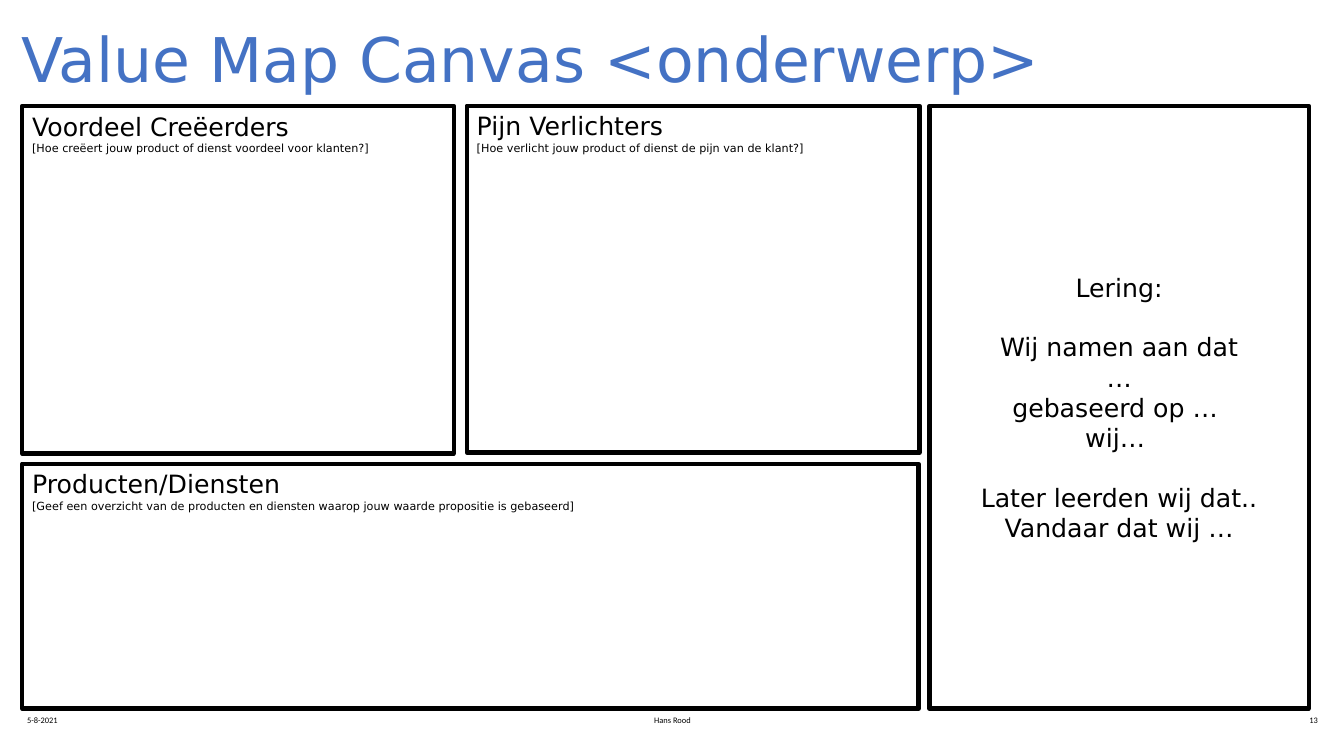
import pptx
import pptx.dml.color
import pptx.enum.shapes
import pptx.enum.text
import pptx.util

PX = 9144
ALIGN = pptx.enum.text.PP_ALIGN
ANCHOR = pptx.enum.text.MSO_ANCHOR
BODY_FONT = "DejaVu Sans"
BLACK = "000000"


def colour(value):
    """Turn a hex string into a colour."""
    return pptx.dml.color.RGBColor.from_string(value)


def place(box):
    """Turn a box in px into EMU lengths."""
    return [length * PX for length in box]


def write(para, text, size, font=BODY_FONT, ink=BLACK, align=ALIGN.LEFT):
    """Add one run of text to a paragraph."""
    para.alignment = align
    span = para.add_run()
    span.text = text
    span.font.size = pptx.util.Pt(size)
    span.font.name = font
    span.font.color.rgb = colour(ink)


def add_label(page, box, text, size, inset=(10, 5), **style):
    """Add a one-line text box and return its paragraph."""
    frame = page.shapes.add_textbox(*place(box)).text_frame
    frame.word_wrap = True
    frame.margin_left = frame.margin_right = inset[0] * PX
    frame.margin_top = frame.margin_bottom = inset[1] * PX
    para = frame.paragraphs[0]
    write(para, text, size, **style)
    return para


def add_frame(page, box, anchor):
    """Add a black outlined rectangle and return its text frame."""
    shape = page.shapes.add_shape(pptx.enum.shapes.MSO_SHAPE.RECTANGLE, *place(box))
    shape.shadow.inherit = False
    shape.fill.background()
    shape.line.color.rgb = colour(BLACK)
    shape.line.width = pptx.util.Pt(3)
    frame = shape.text_frame
    frame.word_wrap = True
    frame.vertical_anchor = anchor
    return frame


def add_section(page, box, heading, question):
    """Add a canvas section with its heading and guiding question."""
    frame = add_frame(page, box, ANCHOR.TOP)
    write(frame.paragraphs[0], heading, 18)
    write(frame.add_paragraph(), question, 8)


def add_learning(page, box, groups):
    """Add the learning panel with a gap between groups of lines."""
    frame = add_frame(page, box, ANCHOR.MIDDLE)
    para = frame.paragraphs[0]
    for group_index, lines in enumerate(groups):
        for line_index, line in enumerate(lines):
            if group_index or line_index:
                para = frame.add_paragraph()
            if group_index and not line_index:
                para.space_before = pptx.util.Pt(21)
            write(para, line, 18, align=ALIGN.CENTER)


def add_footer(page, top, height):
    """Add the date, author and page number."""
    for left, width, text, align in (
        (17, 300, "5-8-2021", ALIGN.LEFT),
        (442, 450, "Hans Rood", ALIGN.CENTER),
        (1017, 300, "13", ALIGN.RIGHT),
    ):
        add_label(page, (left, top, width, height), text, 6, font="Calibri", align=align)


def add_canvas(page):
    """Lay out the value map canvas."""
    title = add_label(page, (8, 16, 1109, 84), "Value Map Canvas <onderwerp>", 44,
                      inset=(13, 13), ink="4472C4")
    title.line_spacing = 0.9
    add_section(page, (22, 105, 428, 345), "Voordeel Creëerders",
                "[Hoe creëert jouw product of dienst voordeel voor klanten?]")
    add_section(page, (22, 460, 889, 243), "Producten/Diensten",
                "[Geef een overzicht van de producten en diensten waarop jouw "
                "waarde propositie is gebaseerd]")
    add_section(page, (463, 105, 449, 344), "Pijn Verlichters",
                "[Hoe verlicht jouw product of dienst de pijn van de klant?]")
    add_learning(page, (922, 105, 376, 598), (
        ("Lering:",),
        ("Wij namen aan dat", "…", "gebaseerd op … ", "wij… "),
        ("Later leerden wij dat..", "Vandaar dat wij …"),
    ))
    add_footer(page, 705, 23)


def main():
    """Build and save the deck."""
    deck = pptx.Presentation()
    deck.slide_width, deck.slide_height = place((1333, 750))
    add_canvas(deck.slides.add_slide(deck.slide_layouts[6]))
    deck.save("out.pptx")


if __name__ == "__main__":
    main()
